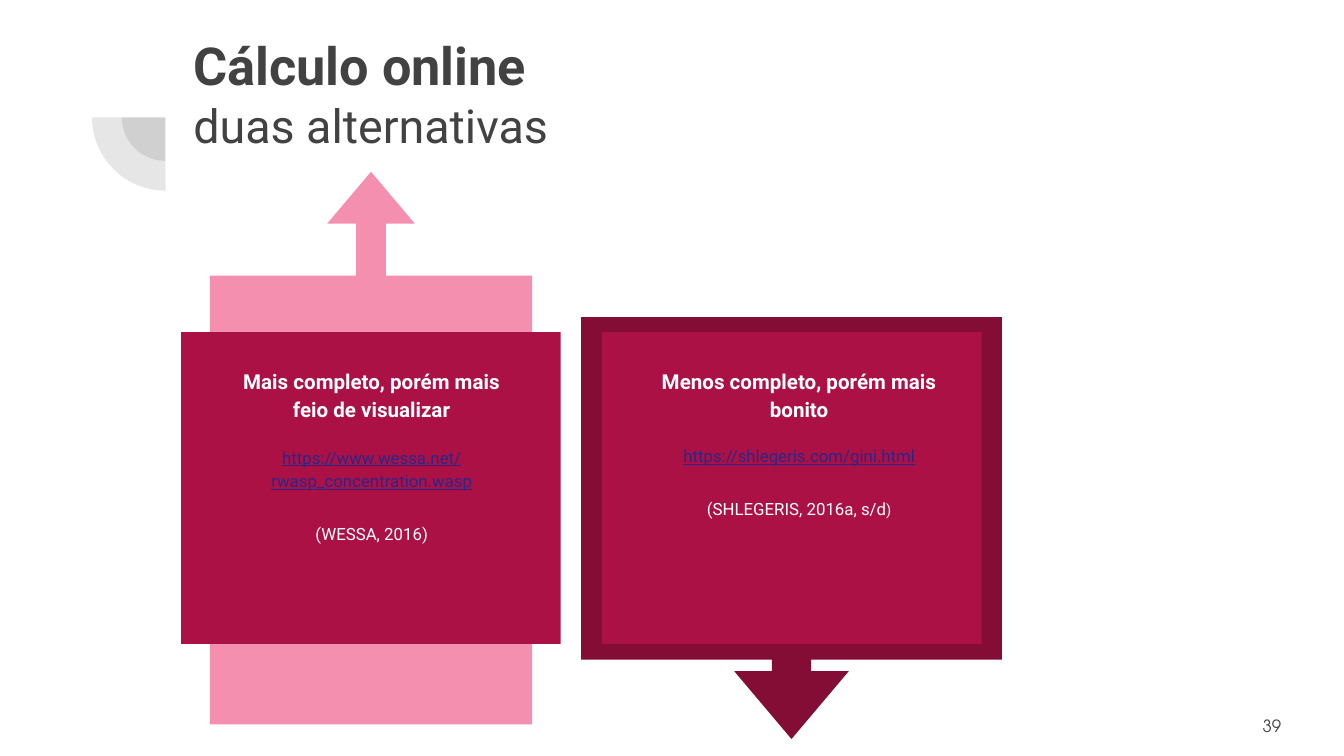
from lxml import etree
from pptx import Presentation
from pptx.dml.color import RGBColor
from pptx.enum.shapes import MSO_SHAPE
from pptx.enum.text import MSO_ANCHOR, PP_ALIGN
from pptx.oxml.ns import qn
from pptx.util import Pt

PIE = MSO_SHAPE.PIE
CALLOUT = MSO_SHAPE.RIGHT_ARROW_CALLOUT
CARD = MSO_SHAPE.SNIP_1_RECTANGLE
LEFT, CENTER, RIGHT = PP_ALIGN.LEFT, PP_ALIGN.CENTER, PP_ALIGN.RIGHT
TOP, MIDDLE = MSO_ANCHOR.TOP, MSO_ANCHOR.MIDDLE

COLORS = {"gray": "424242", "white": "FFFFFF", "link": "27278B",
          "pink": "F48FB0", "crimson": "AC1145", "wine": "840D35"}
BODY_FONT, NUMBER_FONT = "Roboto", "TeX Gyre Adventor"

# Content: each paragraph is (list of (text, size) spans, format)
TITLE = [([("Cálculo online", 28)], {"bold": True}),
         ([("duas alternativas", 25)], {})]
PAGE_NUMBER = [([("39", 9)], {})]
HEADING = {"bold": True}
CITATION = {"before": 16, "after": 16}
OPTIONS = [
    {"callout": "pink", "center": (198.75, 240), "size": (296, 172.6), "turn": 270,
     "card_left": 97, "text_left": 113.8, "text_width": 170.6,
     "text": [
         ([("Mais completo, porém mais feio de visualizar", 11)], HEADING),
         ([("https://www.wessa.net/rwasp_concentration.wasp", 9)],
          {"color": "link", "underline": True, "before": 12}),
         ([("(WESSA, 2016)", 9)], CITATION)]},
    {"callout": "wine", "center": (424, 282.9), "size": (226, 225.4), "turn": 90,
     "card_left": 322.5, "text_left": 337, "text_width": 182.2,
     "text": [
         ([("Menos completo, porém mais bonito", 11)], HEADING),
         ([("https://shlegeris.com/gini.html", 9)],
          {"color": "link", "underline": True, "before": 11}),
         ([("(SHLEGERIS, 2016a, s/d", 9), (")", 8)], CITATION)]},
]
CARD_TOP, CARD_WIDTH, CARD_HEIGHT = 178, 203.4, 167
TEXT_TOP, TEXT_HEIGHT = 188.6, 139
ARC_CENTER, ARC_DIAMETERS = (88.6, 62.8), (46.8, 78.6)
ARC_ANGLES = (107.93, 162)
ARROW = (0.093, 0.136, 0.161, 0.812)


def add_shape(page, kind, left, top, width, height, color, adjustments,
              turn=0, alpha=None):
    shape = page.shapes.add_shape(kind, Pt(left), Pt(top), Pt(width), Pt(height))
    shape.shadow.inherit = False
    shape.rotation = turn
    shape.line.fill.background()
    shape.fill.solid()
    shape.fill.fore_color.rgb = RGBColor.from_string(COLORS[color])
    for index, value in enumerate(adjustments):
        shape.adjustments[index] = value
    if alpha:
        tone = shape._element.spPr.find(qn("a:solidFill"))[0]
        etree.SubElement(tone, qn("a:alpha"), val=str(alpha * 1000))


def add_centered(page, kind, center, size, *style, **extra):
    (x, y), (width, height) = center, size
    add_shape(page, kind, x - width / 2, y - height / 2, width, height, *style, **extra)


def add_text(page, left, top, width, height, paragraphs, color="white",
             font=BODY_FONT, align=LEFT, anchor=TOP, spacing=1):
    box = page.shapes.add_textbox(Pt(left), Pt(top), Pt(width), Pt(height))
    frame = box.text_frame
    frame.word_wrap = True
    frame.vertical_anchor = anchor
    frame.margin_left = frame.margin_right = Pt(7.2)
    frame.margin_top = frame.margin_bottom = Pt(7.2)
    for index, (spans, style) in enumerate(paragraphs):
        para = frame.add_paragraph() if index else frame.paragraphs[0]
        para.alignment = align
        para.line_spacing = spacing
        para.space_before = Pt(style.get("before", 0))
        para.space_after = Pt(style.get("after", 0))
        for text, size in spans:
            span = para.add_run()
            span.text = text
            span.font.name = font
            span.font.size = Pt(size)
            span.font.bold = style.get("bold", False)
            span.font.underline = style.get("underline", False)
            span.font.color.rgb = RGBColor.from_string(COLORS[style.get("color", color)])


deck = Presentation()
deck.slide_width, deck.slide_height = Pt(720), Pt(405)
page = deck.slides.add_slide(deck.slide_layouts[6])

# Quarter-circle ornament
for diameter in ARC_DIAMETERS:
    add_centered(page, PIE, ARC_CENTER, (diameter, diameter), "gray", ARC_ANGLES,
                 turn=270, alpha=13)

# Title and page number
add_text(page, 96.5, 10.8, 553.7, 46, TITLE, color="gray")
add_text(page, 636.5, 373.7, 56.9, 30.2, PAGE_NUMBER, color="gray",
         font=NUMBER_FONT, align=RIGHT, anchor=MIDDLE)

# Alternatives: arrow callout, card and text
for option in OPTIONS:
    add_centered(page, CALLOUT, option["center"], option["size"], option["callout"],
                 ARROW, turn=option["turn"])
    add_shape(page, CARD, option["card_left"], CARD_TOP, CARD_WIDTH, CARD_HEIGHT,
              "crimson", [0])
    add_text(page, option["text_left"], TEXT_TOP, option["text_width"], TEXT_HEIGHT,
             option["text"], align=CENTER, spacing=1.15)

deck.save("out.pptx")
